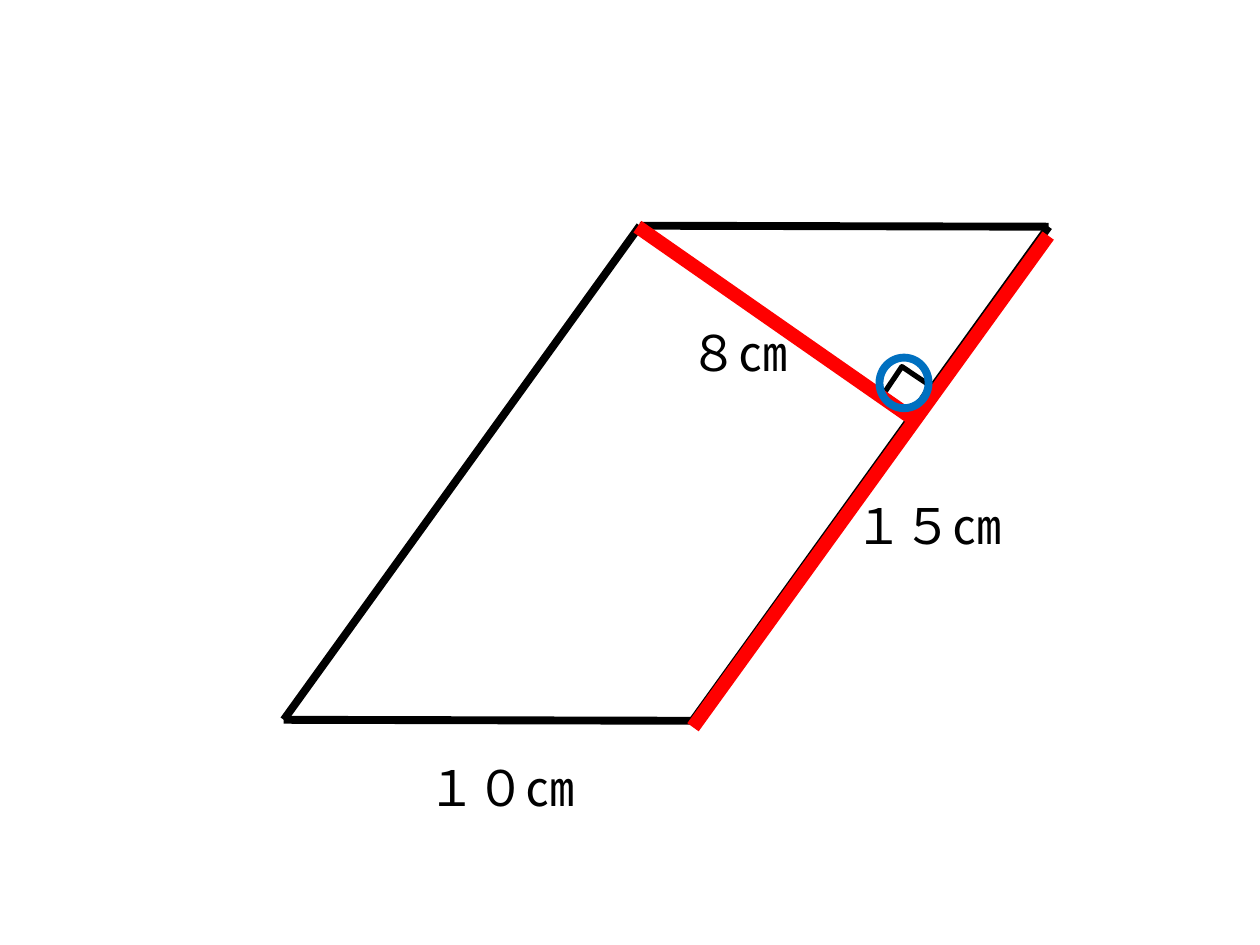
from lxml import etree
from pptx import Presentation
from pptx.dml.color import RGBColor
from pptx.enum.dml import MSO_LINE
from pptx.enum.shapes import MSO_CONNECTOR, MSO_SHAPE
from pptx.enum.text import MSO_ANCHOR, PP_ALIGN
from pptx.oxml.ns import qn
from pptx.util import Cm, Pt

STRAIGHT = MSO_CONNECTOR.STRAIGHT
RECTANGLE = MSO_SHAPE.RECTANGLE
OVAL = MSO_SHAPE.OVAL
SHORT_DASH = MSO_LINE.SQUARE_DOT
MIDDLE = MSO_ANCHOR.MIDDLE
CENTER = PP_ALIGN.CENTER

COLORS = {"ink": "000000", "paper": "FFFFFF", "accent": "FF0000", "ring": "0070C0"}
FONT = "Noto Sans CJK JP"
LABEL_SIZE = (4.01, 1.75)


class Figure:
    """Holds the style and the current slide; all lengths are in centimetres."""

    frame_format = {"word_wrap": True, "vertical_anchor": MIDDLE}
    font_format = {"name": FONT, "size": Pt(28)}

    def __init__(self, page):
        self.page = page

    def color(self, name):
        return RGBColor.from_string(COLORS[name])

    def outline(self, item, color, width):
        item.line.color.rgb = self.color(color)
        item.line.width = Pt(width)

    def segment(self, start, end, color="ink", width=4.5, dash=None):
        ends = [Cm(value) for value in (*start, *end)]
        line = self.page.shapes.add_connector(STRAIGHT, *ends)
        self.outline(line, color, width)
        if dash:
            line.line.dash_style = dash
        etree.SubElement(line._element.spPr, qn("a:effectLst"))

    def shape(self, kind, place, color, width, fill=None, rotation=0):
        box = self.page.shapes.add_shape(kind, *[Cm(value) for value in place])
        box.shadow.inherit = False
        box.rotation = rotation
        if fill:
            box.fill.solid()
            box.fill.fore_color.rgb = self.color(fill)
        else:
            box.fill.background()
        self.outline(box, color, width)
        return box

    def set_text(self, box, text):
        for name, value in self.frame_format.items():
            setattr(box.text_frame, name, value)
        para = box.text_frame.paragraphs[0]
        para.alignment = CENTER
        span = para.add_run()
        span.text = text
        for name, value in self.font_format.items():
            setattr(span.font, name, value)
        span.font.color.rgb = self.color("ink")
        east_asian = etree.SubElement(span.font._element, qn("a:ea"))
        east_asian.set("typeface", FONT)

    def label(self, text, left, top):
        place = [Cm(value) for value in (left, top, *LABEL_SIZE)]
        self.set_text(self.page.shapes.add_textbox(*place), text)

    def plate(self, text, left, top):
        place = (left, top, *LABEL_SIZE)
        self.set_text(self.shape(RECTANGLE, place, "paper", 4.5, fill="paper"), text)


def main():
    deck = Presentation()
    deck.slide_width, deck.slide_height = Cm(25.4), Cm(19.05)
    figure = Figure(deck.slides.add_slide(deck.slide_layouts[6]))

    # Parallelogram
    top_left, top_right = (12.9, 4.55), (21.14, 4.57)
    bottom_left, bottom_right = (5.72, 14.51), (13.96, 14.53)
    foot = (18.36, 8.41)
    for start, end in (
        (top_left, bottom_left),
        (top_right, bottom_right),
        (bottom_right, bottom_left),
        (top_right, top_left),
    ):
        figure.segment(start, end)

    # Height and its right-angle mark
    figure.segment(foot, top_left, dash=SHORT_DASH)
    figure.shape(RECTANGLE, (17.91, 7.52, 0.69, 0.76), "ink", 3, rotation=33.9)

    # Lengths
    figure.plate("１０㎝", 8.1, 14.99)
    figure.label("１５㎝", 16.71, 9.7)
    figure.label("８㎝", 12.88, 6.22)

    # Highlighted base, height and right angle
    figure.segment((13.97, 14.66), (21.13, 4.75), "accent", 8)
    figure.segment(foot, (12.85, 4.57), "accent", 8)
    figure.shape(OVAL, (17.73, 7.21, 0.99, 1.02), "ring", 4.5)

    deck.save("out.pptx")


if __name__ == "__main__":
    main()
